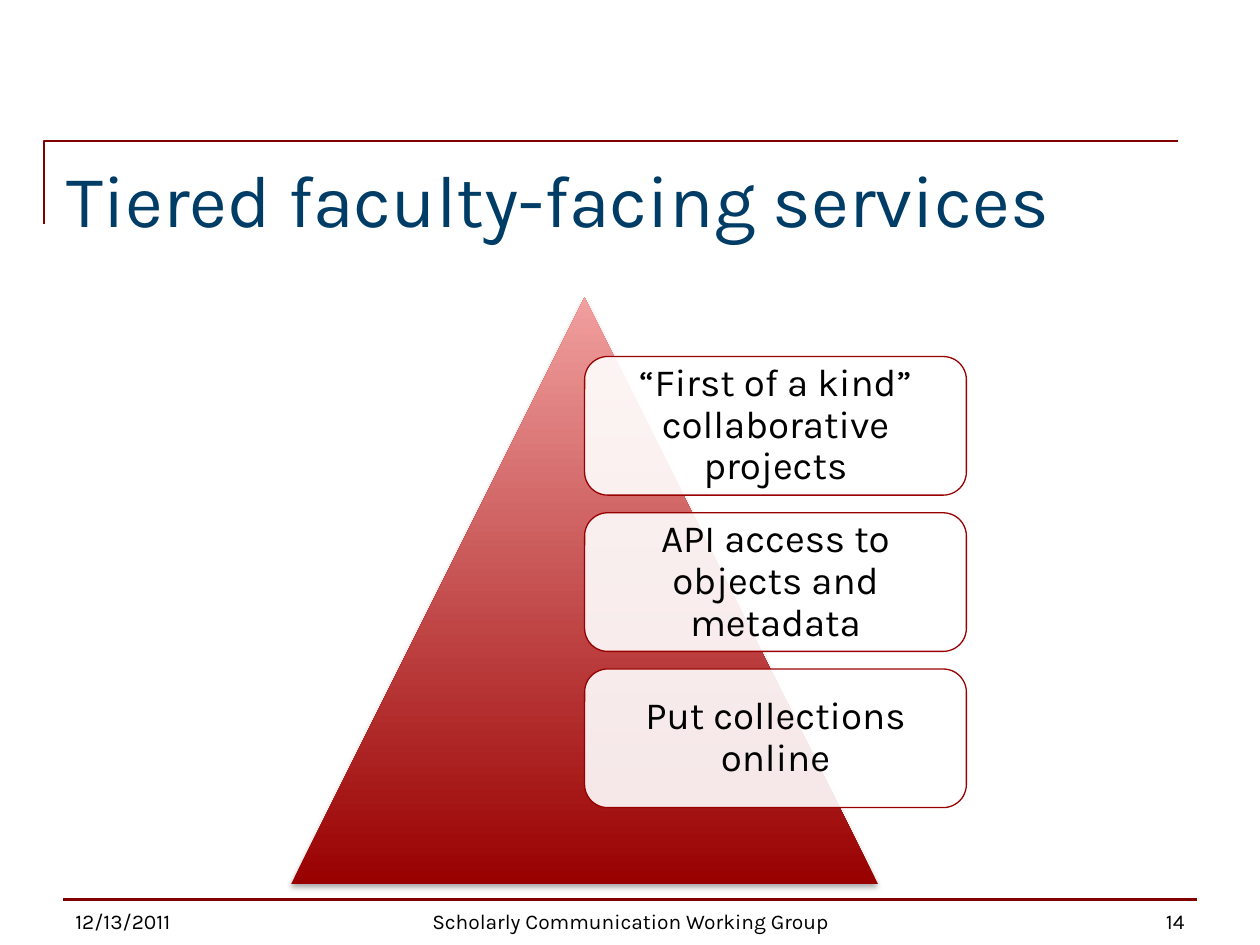
from dataclasses import dataclass
from pptx import Presentation
from pptx.dml.color import RGBColor
from pptx.enum.shapes import MSO_CONNECTOR, MSO_SHAPE
from pptx.enum.text import MSO_ANCHOR, MSO_AUTO_SIZE, PP_ALIGN
from pptx.oxml.ns import qn
from pptx.shapes.autoshape import Shape
from pptx.slide import Slide
from pptx.text.text import TextFrame
from pptx.util import Inches, Pt
from lxml.etree import SubElement


@dataclass(frozen=True)
class Theme:
    """Colours, font and type sizes of the slide."""
    font: str = "Karla"
    ink: str = "000000"
    title: str = "003D66"
    rule: str = "800000"
    deep: str = "990000"
    pale: str = "F19F9F"
    card: str = "FFFFFF"
    head: int = 42
    body: int = 22
    foot: int = 12


@dataclass(frozen=True)
class Box:
    """A rectangle in inches."""
    left: float
    top: float
    width: float
    height: float

    def place(self) -> tuple:
        """Return the rectangle as lengths."""
        return tuple(Inches(n) for n in (self.left, self.top, self.width, self.height))


@dataclass(frozen=True)
class Note:
    """One footer entry."""
    text: str
    left: float
    width: float
    align: PP_ALIGN


THEME = Theme()
TIERS = (
    "“First of a kind” collaborative projects",
    "API access to objects and metadata",
    "Put collections online",
)
NOTES = (
    Note("12/13/2011", 0.5, 2.33, PP_ALIGN.LEFT),
    Note("Scholarly Communication Working Group", 2.94, 4.13, PP_ALIGN.CENTER),
    Note("14", 7.17, 2.33, PP_ALIGN.RIGHT),
)


def tint(code: str) -> RGBColor:
    """Turn a hex code into a colour."""
    return RGBColor.from_string(code)


def write(frame: TextFrame, text: str, size: int, color: str,
          align: PP_ALIGN, anchor: MSO_ANCHOR) -> None:
    """Set and format the text of a frame."""
    frame.text = text
    frame.word_wrap = True
    frame.auto_size = MSO_AUTO_SIZE.NONE
    frame.vertical_anchor = anchor
    para = frame.paragraphs[0]
    para.alignment = align
    font = para.runs[0].font
    font.name, font.size = THEME.font, Pt(size)
    font.color.rgb = tint(color)


def draw_rules(slide: Slide) -> None:
    """Draw the title bracket and the footer rule."""
    pen = slide.shapes.build_freeform(Inches(0.35), Inches(1.78))
    pen.add_line_segments([(Inches(0.35), Inches(1.12)), (Inches(9.35), Inches(1.12))],
                          close=False)
    frame = pen.convert_to_shape()
    frame.shadow.inherit = False
    frame.fill.background()
    rule = slide.shapes.add_connector(MSO_CONNECTOR.STRAIGHT, Inches(0.5), Inches(7.14),
                                      Inches(9.5), Inches(7.14))
    SubElement(rule._element.spPr, qn("a:effectLst"))
    for part in (frame, rule):
        part.line.color.rgb = tint(THEME.rule)
        part.line.width = Pt(1.5)


def draw_title(slide: Slide, text: str) -> None:
    """Fill and place the title."""
    title = slide.shapes.title
    title.left, title.top, title.width, title.height = Box(0.43, 1.17, 9, 1.25).place()
    write(title.text_frame, text, THEME.head, THEME.title, PP_ALIGN.LEFT, MSO_ANCHOR.TOP)


def add_shade(shape: Shape) -> None:
    """Give a shape a soft shadow below it."""
    shape.shadow.inherit = False
    effects = shape._element.spPr.find(qn("a:effectLst"))
    shade = SubElement(effects, qn("a:outerShdw"), blurRad=str(Pt(3.1)),
                       dist=str(Pt(1.8)), dir="5400000", rotWithShape="0")
    color = SubElement(shade, qn("a:srgbClr"), val=THEME.ink)
    SubElement(color, qn("a:alpha"), val="35000")


def draw_peak(slide: Slide, box: Box) -> None:
    """Draw the shaded pyramid."""
    peak = slide.shapes.add_shape(MSO_SHAPE.ISOSCELES_TRIANGLE, *box.place())
    peak.line.fill.background()
    peak.fill.gradient()
    peak.fill.gradient_angle = 90
    for stop, code in zip(peak.fill.gradient_stops, (THEME.deep, THEME.pale)):
        stop.color.rgb = tint(code)
    add_shade(peak)


def draw_tier(slide: Slide, text: str, box: Box) -> None:
    """Draw one tier card with its text."""
    card = slide.shapes.add_shape(MSO_SHAPE.ROUNDED_RECTANGLE, *box.place())
    card.shadow.inherit = False
    card.fill.solid()
    card.fill.fore_color.rgb = tint(THEME.card)
    color = card._element.spPr.find(qn("a:solidFill")).find(qn("a:srgbClr"))
    SubElement(color, qn("a:alpha"), val="90000")
    card.line.color.rgb = tint(THEME.deep)
    card.line.width = Pt(0.75)
    frame = card.text_frame
    frame.margin_left = frame.margin_right = Inches(0.09)
    frame.margin_top = frame.margin_bottom = Inches(0.09)
    write(frame, text, THEME.body, THEME.ink, PP_ALIGN.CENTER, MSO_ANCHOR.MIDDLE)
    frame.paragraphs[0].line_spacing = 0.9


def draw_note(slide: Slide, note: Note) -> None:
    """Draw one footer entry."""
    box = Box(note.left, 6.96, note.width, 0.5)
    label = slide.shapes.add_textbox(*box.place())
    write(label.text_frame, note.text, THEME.foot, THEME.ink, note.align, MSO_ANCHOR.BOTTOM)


def main() -> None:
    """Build and save the slide."""
    deck = Presentation()
    deck.slide_width, deck.slide_height = Inches(10), Inches(7.5)
    slide = deck.slides.add_slide(deck.slide_layouts[5])
    draw_rules(slide)
    draw_title(slide, "Tiered faculty-facing services")
    draw_peak(slide, Box(2.31, 2.36, 4.66, 4.66))
    for row, text in enumerate(TIERS):
        draw_tier(slide, text, Box(4.64, 2.83 + row * 1.24, 3.03, 1.1))
    for note in NOTES:
        draw_note(slide, note)
    deck.save("out.pptx")


if __name__ == "__main__":
    main()
